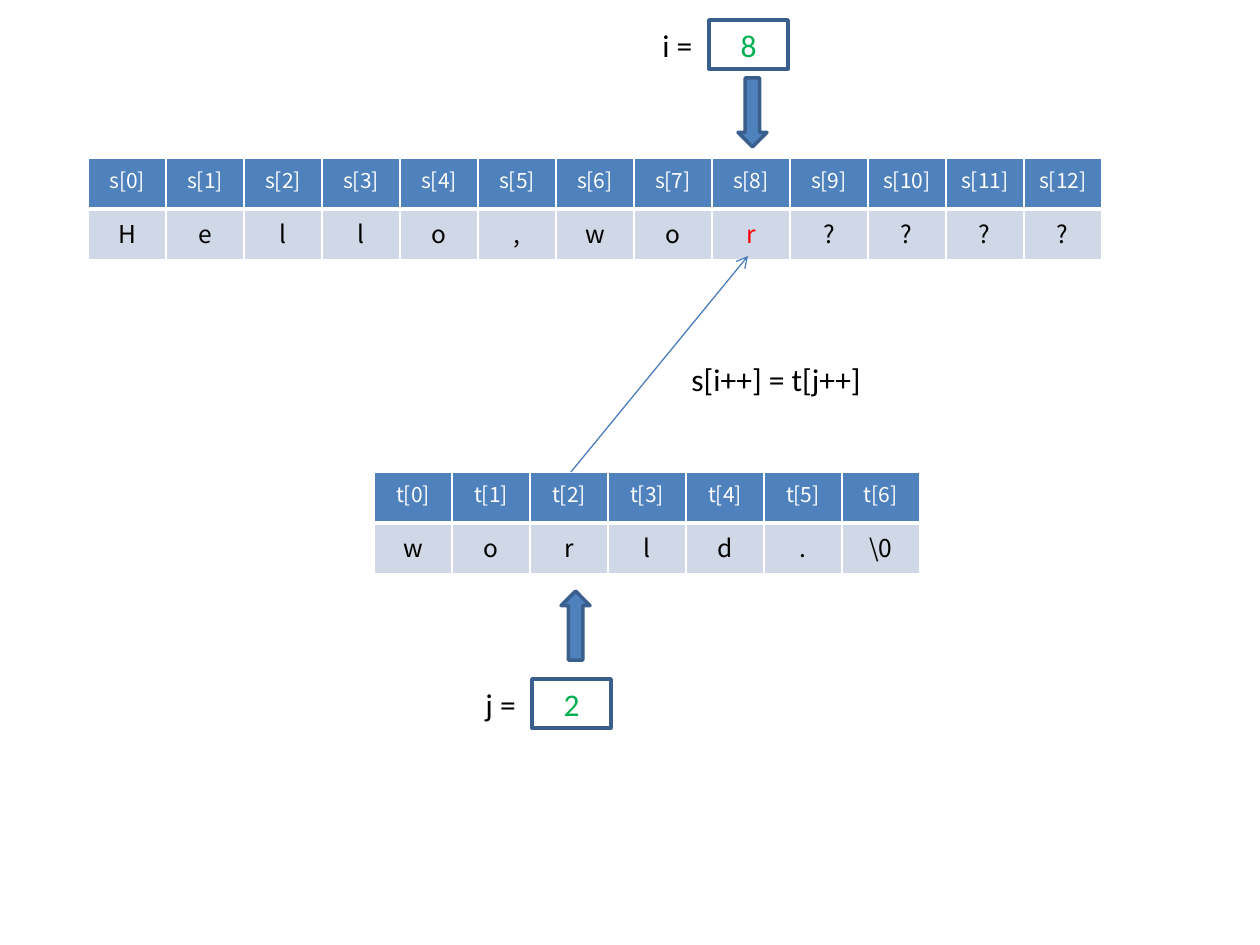
from dataclasses import dataclass

from lxml import etree
from pptx import Presentation
from pptx import util as u
from pptx.dml.color import RGBColor
from pptx.enum import shapes, text
from pptx.oxml import ns


@dataclass(frozen=True)
class Theme:
    white: str = "FFFFFF"
    black: str = "000000"
    blue: str = "4F81BD"
    outline: str = "3A5F8C"
    link: str = "4B7EBC"
    pale: str = "D0D8E8"
    index: str = "00B050"
    copied: str = "FF0000"
    font: str = "Calibri"
    cell_font: str = "Noto Sans CJK JP"
    label_size: int = 18
    head_size: int = 12
    cell_size: int = 14


@dataclass(frozen=True)
class CharArray:
    name: str
    chars: tuple[str, ...]
    x: int
    y: int
    marked: int | None = None


@dataclass(frozen=True)
class Counter:
    name: str
    value: int
    label_x: int
    box_x: int
    y: int
    arrow_x: int
    arrow_y: int
    turn: int


T = Theme()
PX = 914400 / 126
COL, ROW = 78, 51
BOX_W, BOX_H = 79, 49
ARROW_W, ARROW_H = 29, 69

ARRAYS = (
    CharArray("s", tuple("Hello,wor????"), 88, 158, marked=8),
    CharArray("t", (*"world.", "\\0"), 374, 472),
)
COUNTERS = (
    Counter("i", 8, 650, 709, 20, 738, 78, 0),
    Counter("j", 2, 473, 532, 679, 561, 591, 180),
)


def px(*values: int) -> list[u.Emu]:
    return [u.Emu(round(v * PX)) for v in values]


def rgb(color: str) -> RGBColor:
    return RGBColor.from_string(color)


def add_run(tf, content: str, size: int, color: str, font: str = T.font, align=None) -> None:
    p = tf.paragraphs[0]
    p.alignment = align
    r = p.add_run()
    r.text = content
    r.font.name = font
    r.font.size = u.Pt(size)
    r.font.bold = False
    r.font.color.rgb = rgb(color)


def add_borders(cell, bottom: int) -> None:
    tc_pr = cell._tc.get_or_add_tcPr()
    for i, (side, width) in enumerate({"L": 1, "R": 1, "T": 1, "B": bottom}.items()):
        ln = etree.Element(ns.qn(f"a:ln{side}"), w=str(u.Pt(width)))
        fill = etree.SubElement(ln, ns.qn("a:solidFill"))
        etree.SubElement(fill, ns.qn("a:srgbClr"), val=T.white)
        tc_pr.insert(i, ln)


def fill_cell(cell, content: str, size: int, color: str, fill: str, bottom: int) -> None:
    cell.fill.solid()
    cell.fill.fore_color.rgb = rgb(fill)
    add_borders(cell, bottom)
    add_run(cell.text_frame, content, size, color, T.cell_font, text.PP_ALIGN.CENTER)


def draw_array(s, arr: CharArray) -> None:
    n = len(arr.chars)
    table = s.shapes.add_table(2, n, *px(arr.x, arr.y, n * COL, 2 * ROW)).table
    for row in table.rows:
        row.height = px(ROW)[0]
    for i, char in enumerate(arr.chars):
        table.columns[i].width = px(COL)[0]
        color = T.copied if i == arr.marked else T.black
        fill_cell(table.cell(0, i), f"{arr.name}[{i}]", T.head_size, T.white, T.blue, 3)
        fill_cell(table.cell(1, i), char, T.cell_size, color, T.pale, 1)


def draw_shape(s, kind, box: tuple[int, int, int, int], fill: str):
    sp = s.shapes.add_shape(kind, *px(*box))
    sp.shadow.inherit = False
    sp.fill.solid()
    sp.fill.fore_color.rgb = rgb(fill)
    sp.line.color.rgb = rgb(T.outline)
    sp.line.width = u.Pt(2)
    return sp


def draw_label(s, content: str, x: int, y: int, w: int) -> None:
    tf = s.shapes.add_textbox(*px(x, y, w, ROW)).text_frame
    tf.word_wrap = False
    tf.auto_size = text.MSO_AUTO_SIZE.SHAPE_TO_FIT_TEXT
    add_run(tf, content, T.label_size, T.black)


def draw_counter(s, c: Counter) -> None:
    kinds = shapes.MSO_SHAPE
    arrow = draw_shape(s, kinds.DOWN_ARROW, (c.arrow_x, c.arrow_y, ARROW_W, ARROW_H), T.blue)
    arrow.rotation = c.turn
    sp = draw_shape(s, kinds.RECTANGLE, (c.box_x, c.y, BOX_W, BOX_H), T.white)
    sp.text_frame.vertical_anchor = text.MSO_ANCHOR.MIDDLE
    add_run(sp.text_frame, str(c.value), T.label_size, T.index, align=text.PP_ALIGN.CENTER)
    draw_label(s, f"{c.name} =", c.label_x, c.y, 56)


def draw_link(s, start: tuple[int, int], end: tuple[int, int]) -> None:
    cx = s.shapes.add_connector(shapes.MSO_CONNECTOR.STRAIGHT, *px(*start, *end))
    cx.line.color.rgb = rgb(T.link)
    cx.line.width = u.Pt(0.75)
    etree.SubElement(cx.line._get_or_add_ln(), ns.qn("a:tailEnd"), type="arrow")
    etree.SubElement(cx._element.spPr, ns.qn("a:effectLst"))


def main() -> None:
    prs = Presentation()
    prs.slide_width, prs.slide_height = px(1260, 945)
    s = prs.slides.add_slide(prs.slide_layouts[6])
    for arr in ARRAYS:
        draw_array(s, arr)
    for counter in COUNTERS:
        draw_counter(s, counter)
    draw_label(s, "s[i++] = t[j++]", 679, 354, 197)
    draw_link(s, (571, 472), (748, 256))
    prs.save("out.pptx")


if __name__ == "__main__":
    main()
